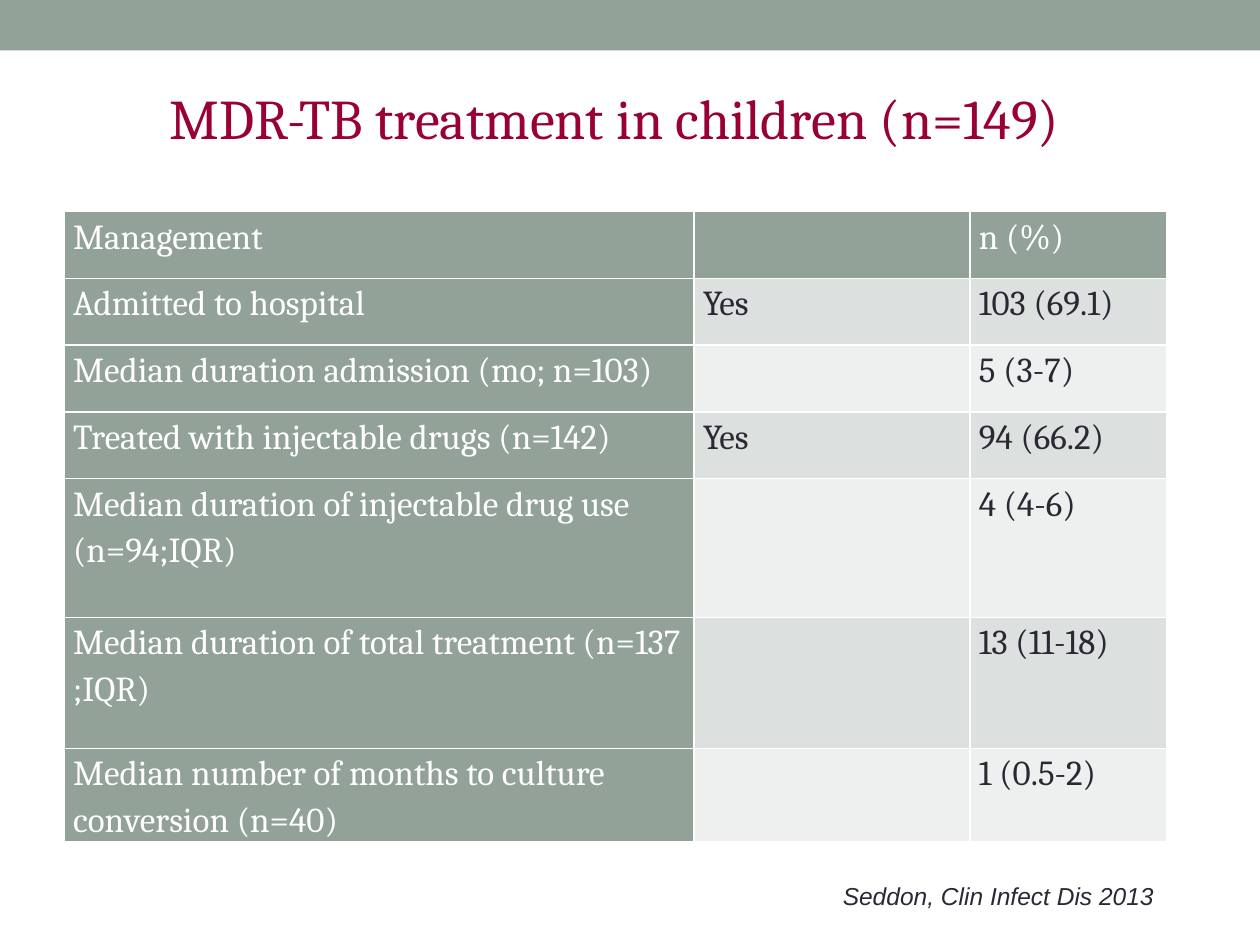
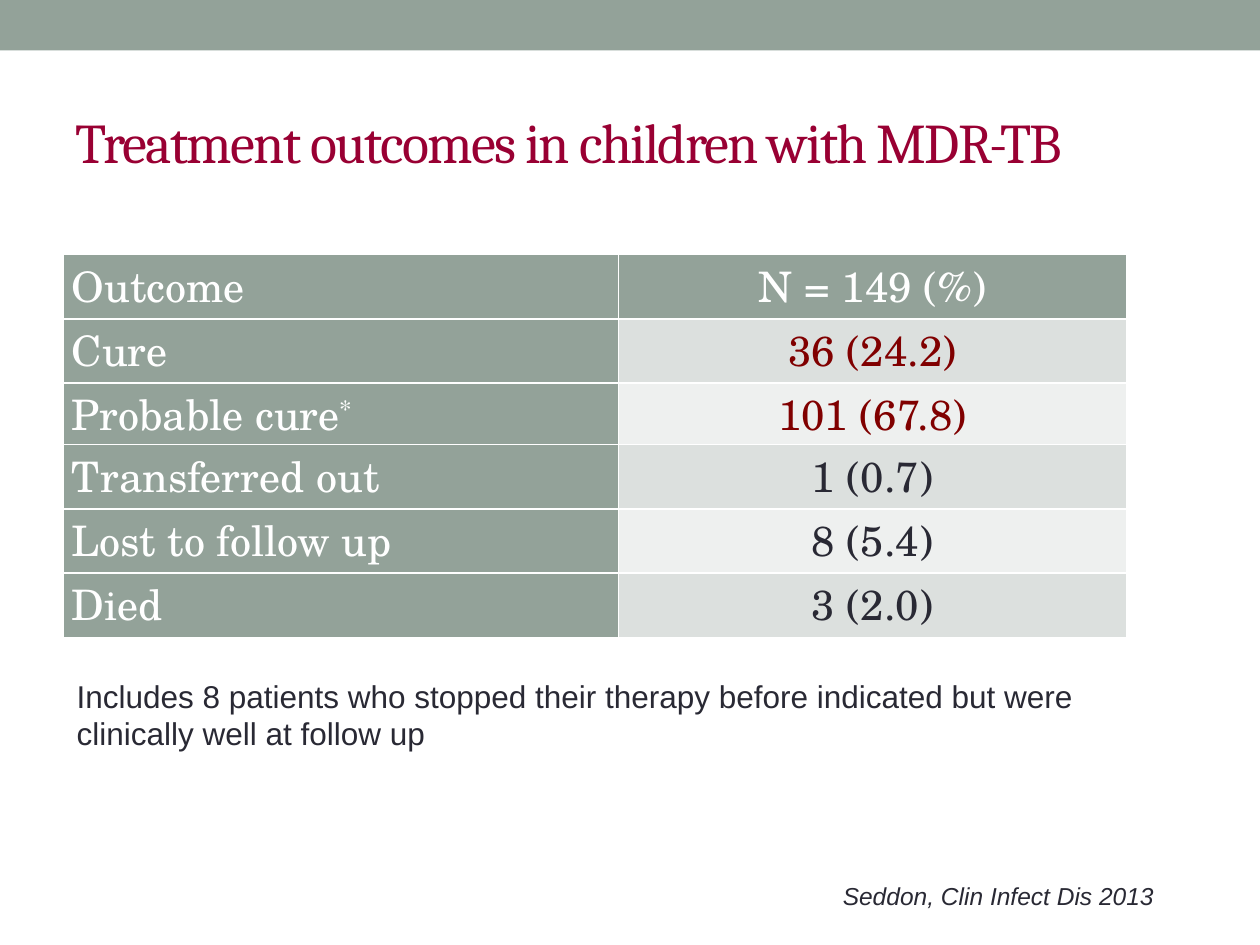
from dataclasses import dataclass

from lxml import etree
from pptx import Presentation, util as u
from pptx.dml.color import RGBColor
from pptx.enum import shapes, text
from pptx.oxml import ns

PX = 9144  # EMU per px, 100 px to the inch
COLORS = {
    "sage": "93A299", "odd": "DCE0DE", "even": "EEF0EF", "white": "FFFFFF",
    "ink": "292934", "title": "990033", "highlight": "800000",
}
SERIF, SANS, TABLE_SERIF = "Cambria", "Arial", "TeX Gyre Schola"
CITATION = "Seddon, Clin Infect Dis 2013"
LEFT, CENTER = text.PP_ALIGN.LEFT, text.PP_ALIGN.CENTER


@dataclass(frozen=True)
class Box:
    x: int
    y: int
    w: int
    h: int

    def emu(self) -> tuple[int, int, int, int]:
        return self.x * PX, self.y * PX, self.w * PX, self.h * PX


@dataclass(frozen=True)
class Font:
    name: str
    size: int
    color: str
    italic: bool = False


@dataclass(frozen=True)
class Title:
    text: str
    box: Box
    align: int
    tracking: int = 0  # hundredths of a point


@dataclass(frozen=True)
class Table:
    x: int
    y: int
    cols: list[int]
    rows: list[int]
    cells: list[list[str]]
    font: str
    size: int
    value_align: int = LEFT
    line_spacing: float = 1.0
    highlighted_rows: tuple[int, ...] = ()


def rgb(name: str) -> RGBColor:
    return RGBColor.from_string(COLORS[name])


def format_run(r, font: Font) -> None:
    f = r.font
    f.name, f.size, f.bold, f.italic = font.name, u.Pt(font.size), False, font.italic
    f.color.rgb = rgb(font.color)


def add_band(slide) -> None:
    sp = slide.shapes.add_shape(shapes.MSO_SHAPE.RECTANGLE, *Box(0, 0, 1000, 40).emu())
    sp.shadow.inherit = False
    sp.fill.solid()
    sp.fill.fore_color.rgb = rgb("sage")
    sp.line.fill.background()


def set_title(slide, title: Title) -> None:
    sp = slide.shapes.title
    sp.left, sp.top, sp.width, sp.height = title.box.emu()
    tf = sp.text_frame
    tf.text = title.text
    tf.auto_size = text.MSO_AUTO_SIZE.NONE
    tf.vertical_anchor = text.MSO_ANCHOR.MIDDLE
    p = tf.paragraphs[0]
    p.alignment = title.align
    r = p.runs[0]
    format_run(r, Font(SERIF, 32, "title"))
    if title.tracking:
        r.font._element.set("spc", str(title.tracking))


def add_text(slide, content: str, box: Box, font: Font) -> None:
    tf = slide.shapes.add_textbox(*box.emu()).text_frame
    tf.word_wrap = True
    tf.text = content
    format_run(tf.paragraphs[0].runs[0], font)


def add_borders(cell) -> None:
    tc_pr = cell._tc.get_or_add_tcPr()
    for side in ("lnL", "lnR", "lnT", "lnB"):
        ln = etree.SubElement(tc_pr, ns.qn(f"a:{side}"), w=str(u.Pt(1)))
        fill = etree.SubElement(ln, ns.qn("a:solidFill"))
        etree.SubElement(fill, ns.qn("a:srgbClr"), val=COLORS["white"])


def fill_cell(cell, content: str, table: Table, row: int, col: int) -> None:
    """Style one cell; a final asterisk becomes a superscript."""
    heading = row == 0 or col == 0
    cell.margin_left = cell.margin_right = 7 * PX
    cell.margin_top = cell.margin_bottom = 0
    add_borders(cell)
    cell.fill.solid()
    cell.fill.fore_color.rgb = rgb("sage" if heading else "odd" if row % 2 else "even")
    if not content:
        return

    if heading:
        color = "white"
    else:
        color = "highlight" if row in table.highlighted_rows else "ink"
    label = content.removesuffix("*")
    cell.text_frame.text = label
    p = cell.text_frame.paragraphs[0]
    p.alignment = table.value_align if col else LEFT
    p.line_spacing = table.line_spacing
    if label != content:
        r = p.add_run()
        r.text = "*"
        r.font._element.set("baseline", "30000")
    for r in p.runs:
        format_run(r, Font(table.font, table.size, color))


def add_table(slide, table: Table) -> None:
    box = Box(table.x, table.y, sum(table.cols), sum(table.rows))
    grid = slide.shapes.add_table(len(table.rows), len(table.cols), *box.emu()).table
    for column, width in zip(grid.columns, table.cols):
        column.width = width * PX
    for row, height in zip(grid.rows, table.rows):
        row.height = height * PX
    for i, values in enumerate(table.cells):
        for j, value in enumerate(values):
            fill_cell(grid.cell(i, j), value, table, i, j)


def add_slide(prs, title: Title, table: Table):
    slide = prs.slides.add_slide(prs.slide_layouts[5])
    add_band(slide)
    set_title(slide, title)
    add_table(slide, table)
    add_text(slide, CITATION, Box(659, 694, 315, 34), Font(SANS, 14, "ink", italic=True))
    return slide


TREATMENT = Table(
    x=51, y=168, cols=[500, 219, 156], rows=[53] * 4 + [110, 104, 74],
    cells=[
        ["Management", "", "n (%)"],
        ["Admitted to hospital", "Yes", "103 (69.1)"],
        ["Median duration admission (mo; n=103)", "", "5 (3-7)"],
        ["Treated with injectable drugs (n=142)", "Yes", "94 (66.2)"],
        ["Median duration of injectable drug use (n=94;IQR)", "", "4 (4-6)"],
        ["Median duration of total treatment (n=137 ;IQR)", "", "13 (11-18)"],
        ["Median number of months to culture conversion (n=40)", "", "1 (0.5-2)"],
    ],
    font=SERIF, size=20, line_spacing=1.15,
)

OUTCOMES = Table(
    x=50, y=202, cols=[441, 403], rows=[51, 51, 49, 51, 51, 51],
    cells=[
        ["Outcome", "N = 149 (%)"],
        ["Cure", "36 (24.2)"],
        ["Probable cure*", "101 (67.8)"],
        ["Transferred out", "1 (0.7)"],
        ["Lost to follow up", "8 (5.4)"],
        ["Died", "3 (2.0)"],
    ],
    font=TABLE_SERIF, size=24, value_align=CENTER, highlighted_rows=(1, 2),
)


def main() -> None:
    prs = Presentation()
    prs.slide_width, prs.slide_height = 1000 * PX, 750 * PX

    add_slide(
        prs,
        Title("MDR-TB treatment in children (n=149)", Box(51, 61, 874, 64), CENTER),
        TREATMENT,
    )
    outcomes = add_slide(
        prs,
        Title("Treatment outcomes in children with MDR-TB", Box(50, 58, 900, 108),
              LEFT, tracking=-100),
        OUTCOMES,
    )
    add_text(
        outcomes,
        "Includes 8 patients who stopped their therapy before indicated "
        "but were clinically well at follow up",
        Box(51, 532, 859, 111), Font(SANS, 18, "ink"),
    )
    prs.save("out.pptx")


if __name__ == "__main__":
    main()
